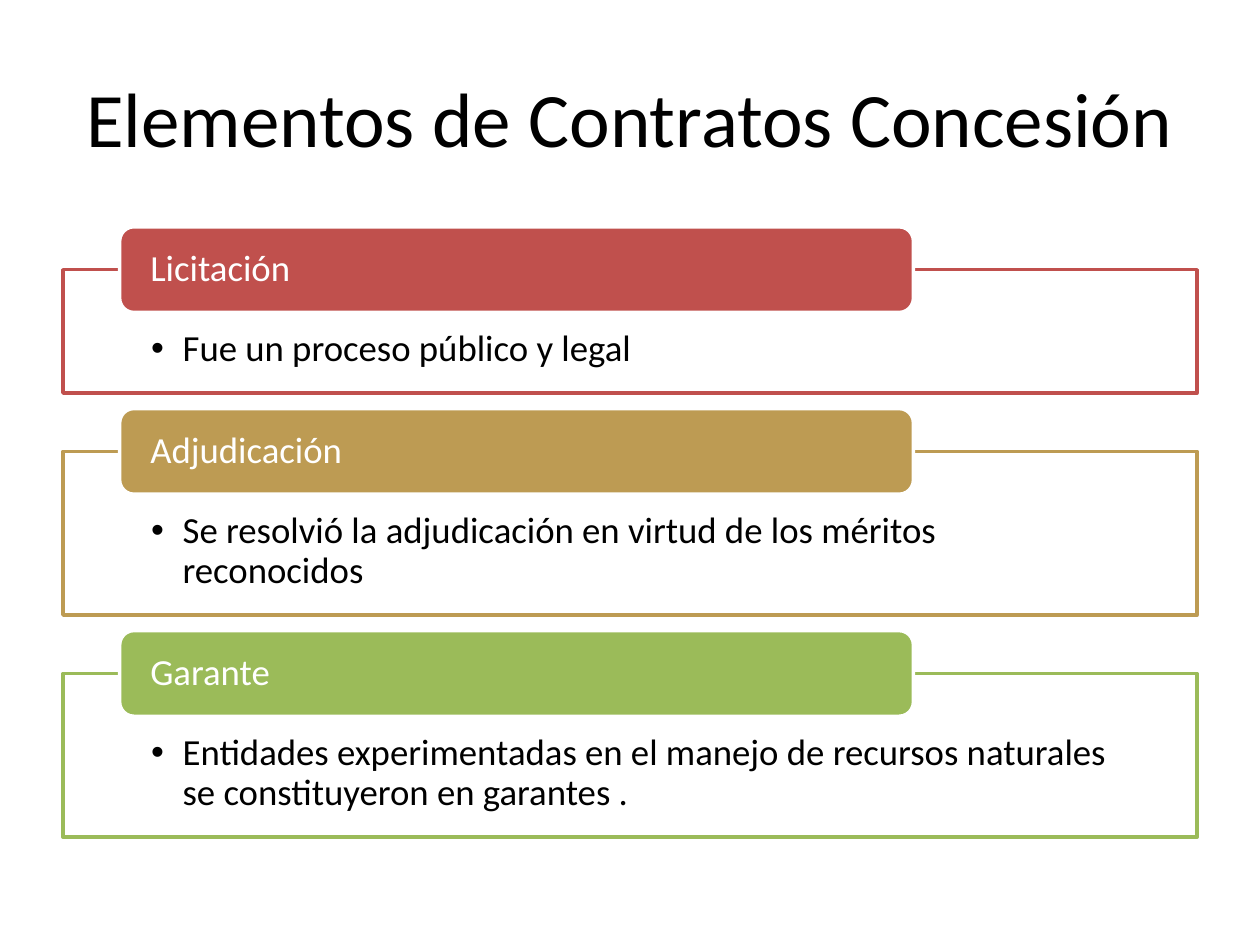
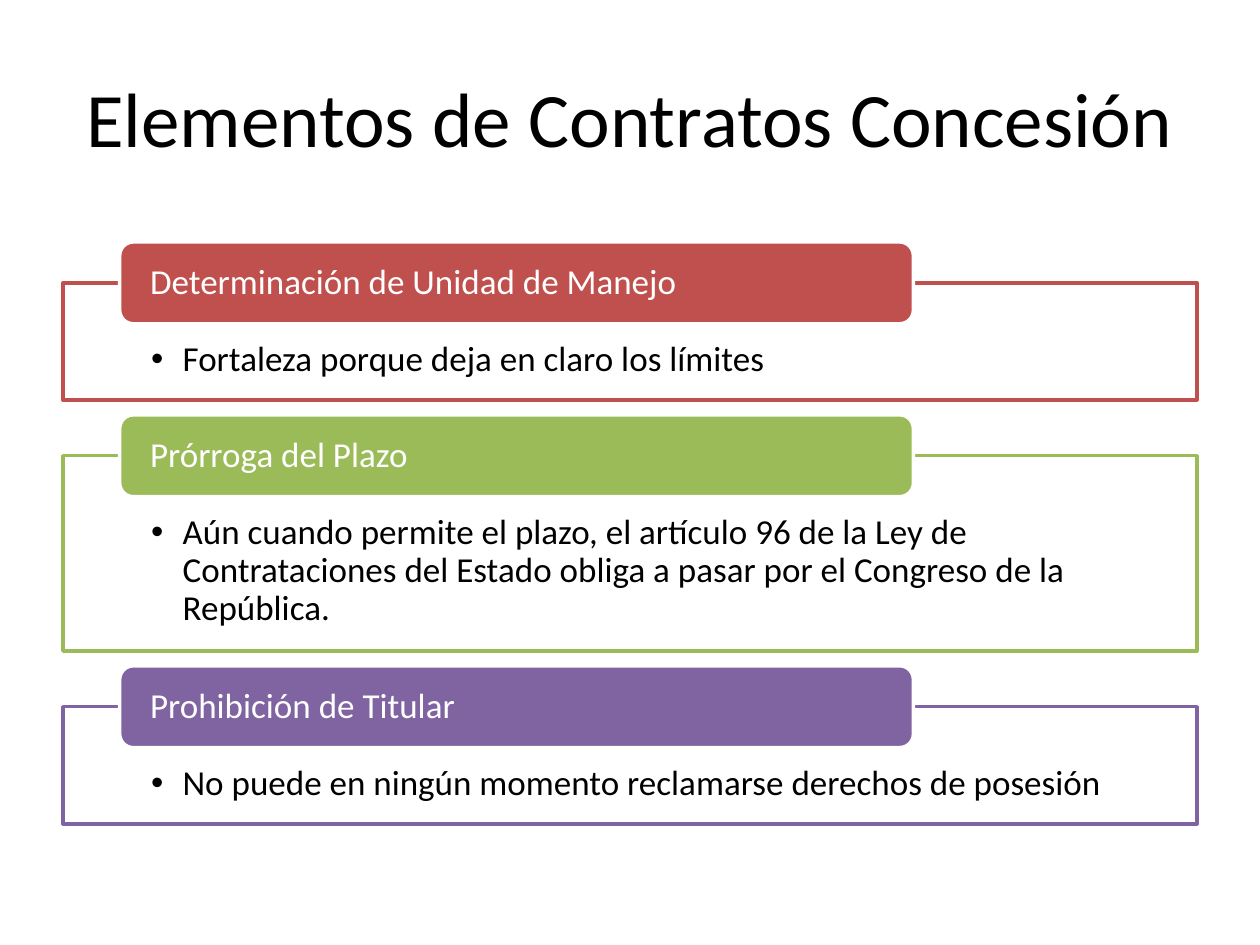
import pptx
import pptx.dml.color
import pptx.enum.shapes
import pptx.enum.text
import pptx.oxml.ns
import pptx.util
from lxml import etree
from pptx.util import Inches

RGBColor = pptx.dml.color.RGBColor
SHAPES = pptx.enum.shapes.MSO_SHAPE
ANCHORS = pptx.enum.text.MSO_ANCHOR
ALIGNS = pptx.enum.text.PP_ALIGN
qn = pptx.oxml.ns.qn

RED = RGBColor(0xC0, 0x50, 0x4D)
GOLD = RGBColor(0xBD, 0x9B, 0x53)
GREEN = RGBColor(0x9B, 0xBB, 0x59)
PURPLE = RGBColor(0x80, 0x64, 0xA2)
BLACK = RGBColor(0, 0, 0)
WHITE = RGBColor(0xFF, 0xFF, 0xFF)

FONT = "Calibri"
TITLE = "Elementos de Contratos Concesión"
TITLE_SIZE = 44
LIST_LEFT, LIST_WIDTH = 0.5, 9
HEADING_INDENT = 0.05  # share of the list width
HEADING_WIDTH = 0.7  # share of the list width
GAP = 0.18  # share of the heading height

# Each element: heading, detail, colour, frame height in inches
SLIDES = [
    dict(top=1.8, heading_height=0.68, size=21, elements=[
        ("Licitación", "Fue un proceso público y legal", RED, 0.98),
        ("Adjudicación",
         "Se resolvió la adjudicación en virtud de los méritos reconocidos",
         GOLD, 1.3),
        ("Garante",
         "Entidades experimentadas en el manejo de recursos naturales "
         "se constituyeron en garantes .", GREEN, 1.3),
    ]),
    dict(top=1.92, heading_height=0.65, size=20, elements=[
        ("Determinación de Unidad de Manejo",
         "Fortaleza porque deja en claro los límites", RED, 0.93),
        ("Prórroga del Plazo",
         "Aún cuando permite el plazo, el artículo 96 de la Ley de "
         "Contrataciones del Estado obliga a pasar por el Congreso de la "
         "República.", GREEN, 1.55),
        ("Prohibición de Titular",
         "No puede en ningún momento reclamarse derechos de posesión",
         PURPLE, 0.93),
    ]),
]


def add_text(paragraph, text, size, color):
    run = paragraph.add_run()
    run.text = text
    run.font.name = FONT
    run.font.size = pptx.util.Pt(size)
    run.font.color.rgb = color


def add_title(slide):
    title = slide.shapes.title
    title.left, title.top = Inches(0.5), Inches(0.3)
    title.width, title.height = Inches(9), Inches(1.25)
    title.text_frame.vertical_anchor = ANCHORS.MIDDLE
    paragraph = title.text_frame.paragraphs[0]
    paragraph.alignment = ALIGNS.CENTER
    add_text(paragraph, TITLE, TITLE_SIZE, BLACK)


def add_panel(slide, kind, box, fill, line, insets, anchor):
    """Add a filled, outlined shape; return it with its left-aligned paragraph."""
    panel = slide.shapes.add_shape(kind, *map(Inches, box))
    panel.shadow.inherit = False
    panel.fill.solid()
    panel.fill.fore_color.rgb = fill
    panel.line.color.rgb = line
    panel.line.width = pptx.util.Pt(2)
    frame = panel.text_frame
    frame.word_wrap = True
    frame.vertical_anchor = anchor
    (frame.margin_left, frame.margin_top,
     frame.margin_right, frame.margin_bottom) = map(Inches, insets)
    paragraph = frame.paragraphs[0]
    paragraph.alignment = ALIGNS.LEFT
    paragraph.line_spacing = 0.9
    return panel, paragraph


def add_bullet(paragraph):
    properties = paragraph._p.get_or_add_pPr()
    properties.set("marL", str(Inches(0.25)))
    properties.set("indent", str(Inches(-0.25)))
    etree.SubElement(properties, qn("a:buFont"), typeface="Arial")
    etree.SubElement(properties, qn("a:buChar"), char="•")


def add_element(slide, box, heading_height, size, heading, detail, color):
    """Place a bulleted frame whose top edge runs behind the heading's middle."""
    left, top, width, height = box
    half = heading_height / 2
    detail_frame, paragraph = add_panel(
        slide, SHAPES.RECTANGLE, (left, top + half, width, height - half),
        WHITE, color, (0.7, half + 0.14, 0.7, 0.16), ANCHORS.TOP)
    white_fill = detail_frame.fill._xPr.find(qn("a:solidFill"))
    etree.SubElement(white_fill[0], qn("a:alpha"), val="90000")
    add_bullet(paragraph)
    add_text(paragraph, detail, size, BLACK)

    heading_box = (left + width * HEADING_INDENT, top,
                   width * HEADING_WIDTH, heading_height)
    _, paragraph = add_panel(
        slide, SHAPES.ROUNDED_RECTANGLE, heading_box, color, WHITE,
        (0.21, 0, 0.21, 0), ANCHORS.MIDDLE)
    add_text(paragraph, heading, size, WHITE)


def add_element_list(slide, top, heading_height, size, elements):
    for heading, detail, color, frame_height in elements:
        height = heading_height / 2 + frame_height
        add_element(slide, (LIST_LEFT, top, LIST_WIDTH, height),
                    heading_height, size, heading, detail, color)
        top += height + GAP * heading_height


def main():
    deck = pptx.Presentation()
    deck.slide_width, deck.slide_height = Inches(10), Inches(7.5)
    title_only = deck.slide_layouts[5]
    for content in SLIDES:
        slide = deck.slides.add_slide(title_only)
        add_title(slide)
        add_element_list(slide, **content)
    deck.save("out.pptx")


if __name__ == "__main__":
    main()
